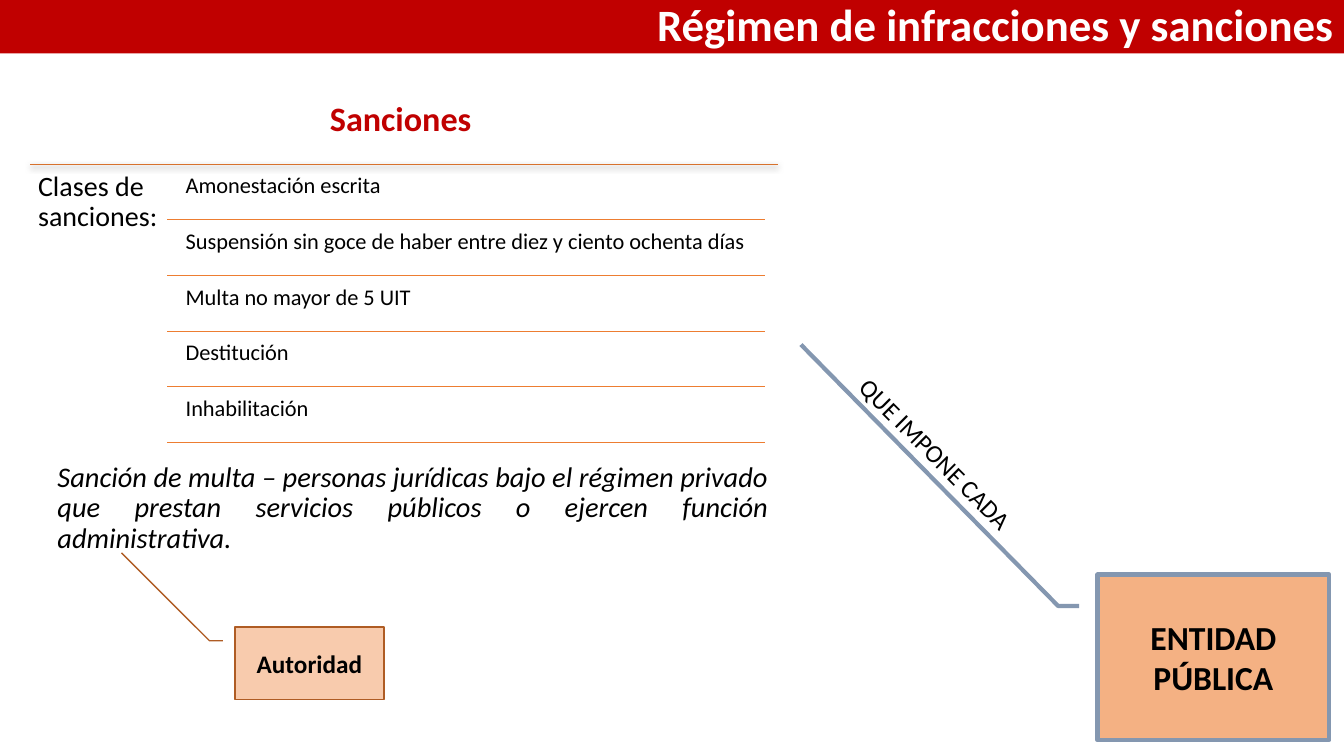
"""Build the slide on the regime of infractions and sanctions."""
from dataclasses import dataclass

import lxml.etree
import pptx
import pptx.dml.color
import pptx.enum.shapes
import pptx.enum.text
import pptx.oxml.ns
import pptx.shapes.autoshape
import pptx.shapes.connector
import pptx.slide
import pptx.util

Cm = pptx.util.Cm
Pt = pptx.util.Pt
ALIGN = pptx.enum.text.PP_ALIGN
ANCHOR = pptx.enum.text.MSO_ANCHOR
SHAPE = pptx.enum.shapes.MSO_SHAPE

FONT = "Calibri"
COLORS = {
    "red": "C00000",
    "white": "FFFFFF",
    "black": "000000",
    "orange": "ED7D31",
    "dark_orange": "D7712C",
    "brown": "AF5C24",
    "peach": "F4B183",
    "light_peach": "F8CBAD",
    "slate": "8497B0",
}
SANCTIONS = [
    "Amonestación escrita",
    "Suspensión sin goce de haber entre diez y ciento ochenta días",
    "Multa no mayor de 5 UIT",
    "Destitución",
    "Inhabilitación",
]
ROW_TOP, ROW_PITCH, ROW_HEIGHT = 4.22, 1.4, 1.32


@dataclass
class Box:
    left: float
    top: float
    width: float
    height: float


@dataclass
class Caption:
    text: str
    size: float
    color: str = "black"
    bold: bool = False
    italic: bool = False
    align: ALIGN = ALIGN.LEFT
    anchor: ANCHOR = ANCHOR.TOP
    spacing: float = 0.9
    inset: tuple[float, float] = (0.25, 0.13)


@dataclass
class Callout:
    box: Box
    caption: Caption
    fill: str
    line: str
    line_width: float
    pointer_end: tuple[float, float]


def rgb(name: str) -> pptx.dml.color.RGBColor:
    return pptx.dml.color.RGBColor.from_string(COLORS[name])


def write(shape: pptx.shapes.autoshape.Shape, caption: Caption) -> None:
    frame = shape.text_frame
    frame.word_wrap = True
    frame.vertical_anchor = caption.anchor
    frame.margin_left = frame.margin_right = Cm(caption.inset[0])
    frame.margin_top = frame.margin_bottom = Cm(caption.inset[1])
    paragraph = frame.paragraphs[0]
    paragraph.text = caption.text
    paragraph.alignment = caption.align
    paragraph.line_spacing = caption.spacing
    font = paragraph.font
    font.name, font.size = FONT, Pt(caption.size)
    font.bold, font.italic = caption.bold, caption.italic
    font.color.rgb = rgb(caption.color)


def add_text(slide: pptx.slide.Slide, box: Box, caption: Caption) -> pptx.shapes.autoshape.Shape:
    shape = slide.shapes.add_textbox(Cm(box.left), Cm(box.top), Cm(box.width), Cm(box.height))
    write(shape, caption)
    return shape


def add_filled(
    slide: pptx.slide.Slide, kind: SHAPE, box: Box, fill: str, caption: Caption
) -> pptx.shapes.autoshape.Shape:
    shape = slide.shapes.add_shape(kind, Cm(box.left), Cm(box.top), Cm(box.width), Cm(box.height))
    shape.shadow.inherit = False
    shape.fill.solid()
    shape.fill.fore_color.rgb = rgb(fill)
    shape.line.fill.background()
    write(shape, caption)
    return shape


def add_callout(slide: pptx.slide.Slide, callout: Callout) -> None:
    shape = add_filled(slide, SHAPE.LINE_CALLOUT_2, callout.box, callout.fill, callout.caption)
    shape.line.color.rgb = rgb(callout.line)
    shape.line.width = Pt(callout.line_width)
    for index, value in enumerate((0.19, -0.08, 0.19, -0.17, *callout.pointer_end)):
        shape.adjustments[index] = value


def add_rule(
    slide: pptx.slide.Slide, left: float, right: float, y: float, color: str
) -> lxml.etree._Element:
    rule = slide.shapes.add_connector(
        pptx.enum.shapes.MSO_CONNECTOR.STRAIGHT, Cm(left), Cm(y), Cm(right), Cm(y)
    )
    rule.line.color.rgb = rgb(color)
    rule.line.width = Pt(0.5)
    return lxml.etree.SubElement(rule._element.spPr, pptx.oxml.ns.qn("a:effectLst"))


def add_shadow(effects: lxml.etree._Element) -> None:
    qn = pptx.oxml.ns.qn
    shadow = lxml.etree.SubElement(
        effects, qn("a:outerShdw"), blurRad=str(Pt(4.5)), dist=str(Pt(1.5)), dir="5400000"
    )
    color = lxml.etree.SubElement(shadow, qn("a:srgbClr"), val=COLORS["black"])
    lxml.etree.SubElement(color, qn("a:alpha"), val="63000")


def main() -> None:
    deck = pptx.Presentation()
    deck.slide_width, deck.slide_height = Cm(33.87), Cm(19.05)
    slide = deck.slides.add_slide(deck.slide_layouts[6])

    add_text(slide, Box(-0.51, 2.44, 21.21, 0.89),
             Caption("Sanciones", 24.4, "red", bold=True, align=ALIGN.CENTER))
    fine_note = add_text(
        slide, Box(0.56, 12.27, 19.05, 1.09),
        Caption("Sanción de multa – personas jurídicas bajo el régimen privado que prestan "
                "servicios públicos o ejercen función administrativa.",
                20.3, italic=True, align=ALIGN.JUSTIFY, anchor=ANCHOR.MIDDLE))
    fine_note.text_frame.margin_left = Cm(0.89)

    add_shadow(add_rule(slide, 0.76, 19.61, 4.14, "dark_orange"))
    add_text(slide, Box(0.76, 4.14, 3.43, 7.06),
             Caption("Clases de sanciones:", 20, inset=(0.2, 0.2)))
    for index, sanction in enumerate(SANCTIONS):
        top = ROW_TOP + index * ROW_PITCH
        add_text(slide, Box(4.5, top, 14.78, ROW_HEIGHT),
                 Caption(sanction, 16, inset=(0.18, 0.18)))
        add_rule(slide, 4.22, 19.28, top + ROW_HEIGHT, "orange")

    add_filled(slide, SHAPE.RECTANGLE, Box(0, 0, 33.87, 1.35), "red",
               Caption("Régimen de infracciones y sanciones", 32, "white", bold=True,
                       align=ALIGN.RIGHT, anchor=ANCHOR.MIDDLE))

    centred = {"bold": True, "align": ALIGN.CENTER, "anchor": ANCHOR.MIDDLE, "spacing": 1.0}
    add_callout(slide, Callout(Box(27.66, 14.48, 5.84, 4.17),
                               Caption("ENTIDAD PÚBLICA", 24, **centred),
                               "peach", "slate", 3, (-1.39, -1.28)))
    imposed_by = add_text(slide, Box(20.65, 11.28, 6.58, 1.02),
                          Caption("QUE IMPONE CADA", 18, spacing=1.0))
    imposed_by.rotation = 44.9
    add_callout(slide, Callout(Box(5.92, 15.8, 3.76, 1.83),
                               Caption("Autoridad", 18, **centred),
                               "light_peach", "brown", 1, (-1.02, -0.76)))
    deck.save("out.pptx")


if __name__ == "__main__":
    main()
